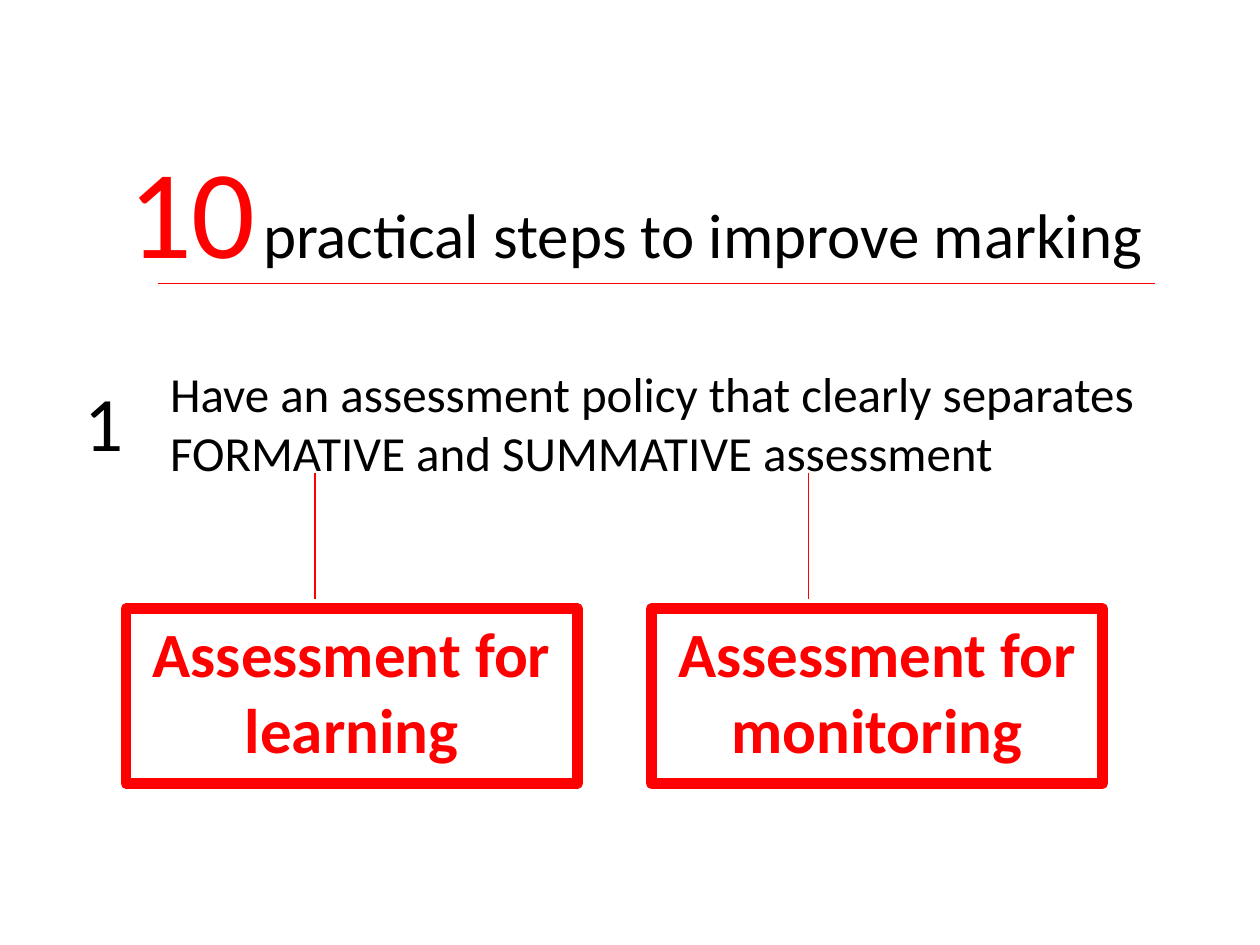
import pptx
import pptx.dml.color
import pptx.enum.shapes
import pptx.enum.text
import pptx.util
from lxml import etree
from pptx.util import Cm

COLOURS = {"accent": "FF0000", "text": "000000"}
FONT = "Calibri"
ALIGN = pptx.enum.text.PP_ALIGN


def colour(name):
    return pptx.dml.color.RGBColor.from_string(COLOURS[name])


def style_run(run, size, colour_name, bold=False):
    run.font.name = FONT
    run.font.size = pptx.util.Pt(size)
    run.font.bold = bold
    run.font.color.rgb = colour(colour_name)


def style_frame(frame, align):
    frame.word_wrap = True
    frame.auto_size = pptx.enum.text.MSO_AUTO_SIZE.NONE
    frame.vertical_anchor = pptx.enum.text.MSO_ANCHOR.TOP
    frame.paragraphs[0].alignment = align


def write(frame, text, size, colour_name, align, bold=False):
    frame.text = text
    style_frame(frame, align)
    style_run(frame.paragraphs[0].runs[0], size, colour_name, bold)


def add_rule(slide, x1, y1, x2, y2):
    rule = slide.shapes.add_connector(
        pptx.enum.shapes.MSO_CONNECTOR.STRAIGHT, Cm(x1), Cm(y1), Cm(x2), Cm(y2))
    rule.line.color.rgb = colour("accent")
    rule.line.width = pptx.util.Pt(0.75)
    etree.SubElement(rule._element.spPr, pptx.oxml.ns.qn("a:effectLst"))


def add_heading(slide, left, top, width, height):
    """Title with a large number, underlined by a thin rule."""
    title = slide.shapes.title
    title.left, title.top = Cm(left), Cm(top)
    title.width, title.height = Cm(width), Cm(height)
    style_frame(title.text_frame, ALIGN.LEFT)
    for text, size, colour_name in (
            ("10", 72, "accent"),
            (" ", 18, "text"),
            ("practical steps to improve marking", 36, "text")):
        run = title.text_frame.paragraphs[0].add_run()
        run.text = text
        style_run(run, size, colour_name)
    rule_y = top + 3.18
    add_rule(slide, left + 0.85, rule_y, left + 20.95, rule_y)


def add_step(slide, left, top, width, height, number, statement):
    """Step number at the left, statement beside it."""
    number_width, statement_offset = 2.75, 3.18
    number_box = slide.shapes.add_textbox(
        Cm(left), Cm(top + 0.22), Cm(number_width), Cm(2.12))
    write(number_box.text_frame, number, 44, "text", ALIGN.RIGHT)
    statement_box = slide.shapes.add_textbox(
        Cm(left + statement_offset), Cm(top),
        Cm(width - statement_offset), Cm(height))
    write(statement_box.text_frame, statement, 28, "text", ALIGN.LEFT)


def add_purpose(slide, left, top, width, height, purpose, stem_x):
    """Framed purpose, with a stem leading down from the term above."""
    frame = slide.shapes.add_shape(
        pptx.enum.shapes.MSO_SHAPE.RECTANGLE,
        Cm(left), Cm(top), Cm(width), Cm(height))
    frame.shadow.inherit = False
    frame.fill.background()
    frame.line.color.rgb = colour("accent")
    frame.line.width = pptx.util.Pt(6)
    write(frame.text_frame, purpose, 36, "accent", ALIGN.CENTER, bold=True)
    stem_end = top - 0.2
    add_rule(slide, left + stem_x, stem_end - 2.54, left + stem_x, stem_end)


def main():
    deck = pptx.Presentation()
    deck.slide_width, deck.slide_height = Cm(25.4), Cm(19.05)
    slide = deck.slides.add_slide(deck.slide_layouts.get_by_name("Title Only"))

    add_heading(slide, 2.33, 2.54, 21.17, 3.3)
    add_step(slide, 0, 7.2, 23.7, 2.62, "1",
             "Have an assessment policy that clearly separates "
             "FORMATIVE and SUMMATIVE assessment")

    # The two purposes of assessment, side by side
    purposes = (("Assessment for learning", 3.81),
                ("Assessment for monitoring", 3.17))
    for column, (purpose, stem_x) in enumerate(purposes):
        add_purpose(slide, 2.54 + column * 10.59, 12.27, 9.1, 3.53,
                    purpose, stem_x)

    deck.save("out.pptx")


if __name__ == "__main__":
    main()
